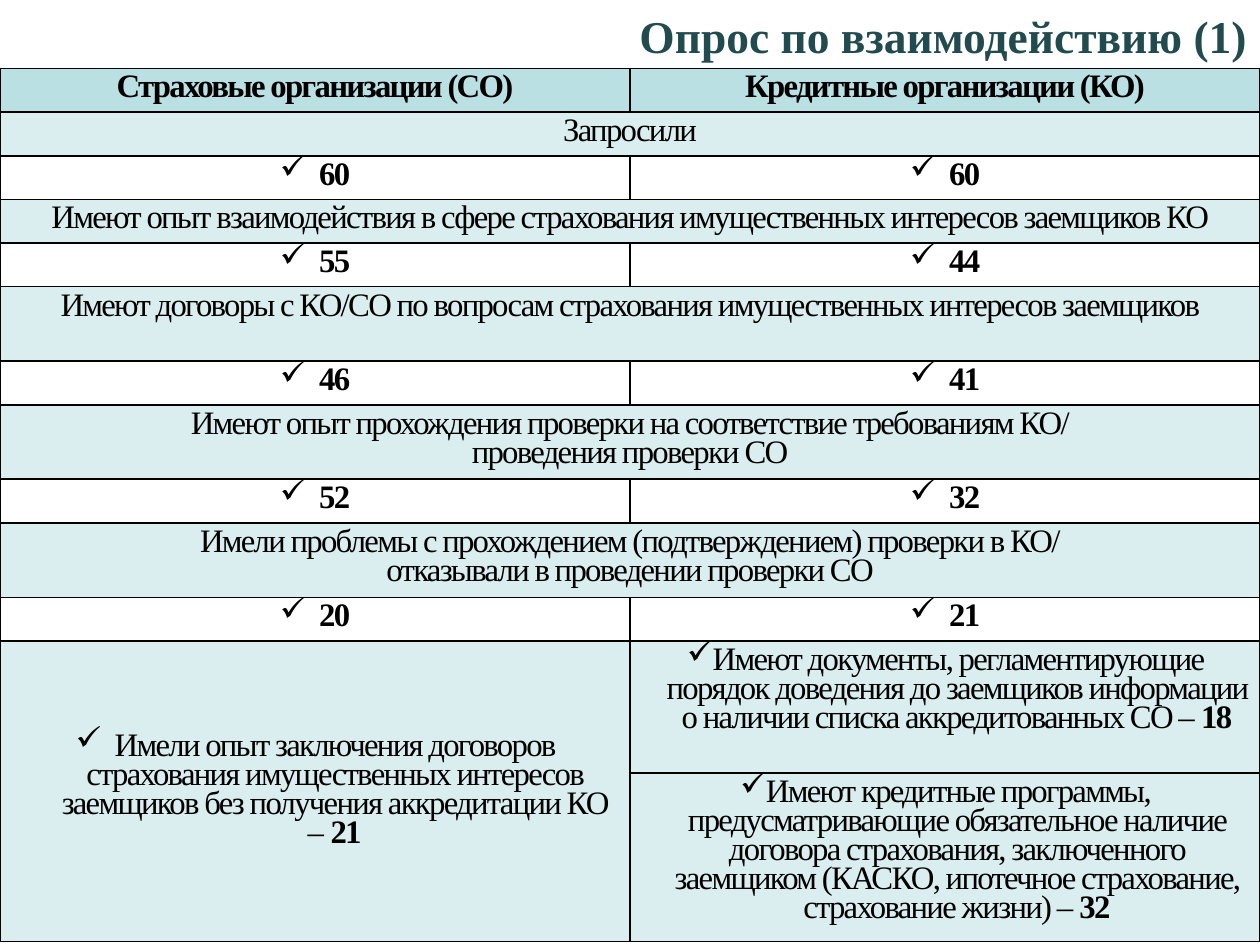
from lxml import etree
from pptx import Presentation
from pptx import util as u
from pptx.dml.color import RGBColor
from pptx.enum import text
from pptx.oxml import ns

FONT = "Times New Roman"
HEADER_FILL, BAND_FILL = "BBE0E3", "DAEDEF"


def color(hex_string):
    return RGBColor.from_string(hex_string)


def write_cell(cell, lines, fill=None, indent=0):
    """Fill a cell; each line is a list of (words, bold), indent adds a check mark."""
    frame = cell.text_frame
    frame.text = "\n".join("" for line in lines)
    for paragraph, line in zip(frame.paragraphs, lines):
        paragraph.alignment = text.PP_ALIGN.CENTER
        paragraph.line_spacing = 0.8
        if indent:
            properties = paragraph._p.get_or_add_pPr()
            properties.set("marL", str(u.Cm(indent)))
            properties.set("indent", str(-u.Cm(indent)))
            etree.SubElement(properties, ns.qn("a:buChar")).set("char", "✓")
        for words, bold in line:
            run = paragraph.add_run()
            run.text = words
            run.font.name = FONT
            run.font.size = u.Pt(18.7)
            run.font.bold = bold
            run.font.color.rgb = color("000000")
            run._r.get_or_add_rPr().set("spc", "-100")
    if fill:
        cell.fill.solid()
        cell.fill.fore_color.rgb = color(fill)


presentation = Presentation()
presentation.slide_width, presentation.slide_height = u.Cm(25.4), u.Cm(19.05)
slide = presentation.slides.add_slide(presentation.slide_layouts[6])

# Survey: question over both columns, then the answers of insurers and banks
survey = [
    (["Запросили"], 60, 60),
    (["Имеют опыт взаимодействия в сфере страхования имущественных интересов заемщиков КО"], 55, 44),
    (["Имеют договоры с КО/СО по вопросам страхования имущественных интересов заемщиков"], 46, 41),
    (["Имеют опыт прохождения проверки на соответствие требованиям КО/",
      "проведения проверки СО"], 52, 32),
    (["Имели проблемы с прохождением (подтверждением) проверки в КО/",
      "отказывали в проведении проверки СО"], 20, 21),
]
# Closing statements: row, column, indent, words, count
statements = [
    (11, 0, 0.79, "Имели опыт заключения договоров страхования имущественных интересов "
     "заемщиков без получения аккредитации КО – ", "21"),
    (11, 1, 0.48, "Имеют документы, регламентирующие порядок доведения до заемщиков "
     "информации о наличии списка аккредитованных СО – ", "18"),
    (12, 1, 0.48, "Имеют кредитные программы, предусматривающие обязательное наличие "
     "договора страхования, заключенного заемщиком (КАСКО, ипотечное страхование, "
     "страхование жизни) – ", "32"),
]

# Table grid
low, tall = 0.88, 1.5
heights = [low] * 5 + [tall, low] * 3 + [2.66, 3.4]
table = slide.shapes.add_table(len(heights), 2, 0, u.Cm(1.38),
                               u.Cm(25.4), u.Cm(sum(heights))).table
table.first_row = table.horz_banding = False
for row, height in zip(table.rows, heights):
    row.height = u.Cm(height)

# Black borders on every cell
for cell in table.iter_cells():
    properties = cell._tc.get_or_add_tcPr()
    for side in ("a:lnL", "a:lnR", "a:lnT", "a:lnB"):
        line = etree.SubElement(properties, ns.qn(side), w=str(u.Pt(1)))
        line_fill = etree.SubElement(line, ns.qn("a:solidFill"))
        etree.SubElement(line_fill, ns.qn("a:srgbClr"), val="000000")
    cell.fill.background()

# Column headings
for column, heading in enumerate(["Страховые организации (СО)", "Кредитные организации (КО)"]):
    write_cell(table.cell(0, column), [[(heading, True)]], HEADER_FILL)

# Questions and answers
for index, (question, *answers) in enumerate(survey):
    question_row = 1 + 2 * index
    table.cell(question_row, 0).merge(table.cell(question_row, 1))
    write_cell(table.cell(question_row, 0), [[(words, False)] for words in question], BAND_FILL)
    for column, answer in enumerate(answers):
        write_cell(table.cell(question_row + 1, column), [[(str(answer), True)]], indent=0.79)

# Closing statements
table.cell(11, 0).merge(table.cell(12, 0))
table.cell(11, 0).vertical_anchor = text.MSO_ANCHOR.MIDDLE
for row, column, indent, words, count in statements:
    write_cell(table.cell(row, column), [[(words, False), (count, True)]], BAND_FILL, indent)

# Title
title = slide.shapes.add_textbox(u.Cm(9.8), u.Cm(0.03), u.Cm(15.6), u.Cm(1.37))
title.text_frame.word_wrap = True
title.text_frame.text = "Опрос по взаимодействию (1)"
paragraph = title.text_frame.paragraphs[0]
paragraph.alignment = text.PP_ALIGN.RIGHT
title_font = paragraph.runs[0].font
title_font.name, title_font.size, title_font.bold = FONT, u.Pt(26), True
title_font.color.rgb = color("224B50")

presentation.save("out.pptx")
